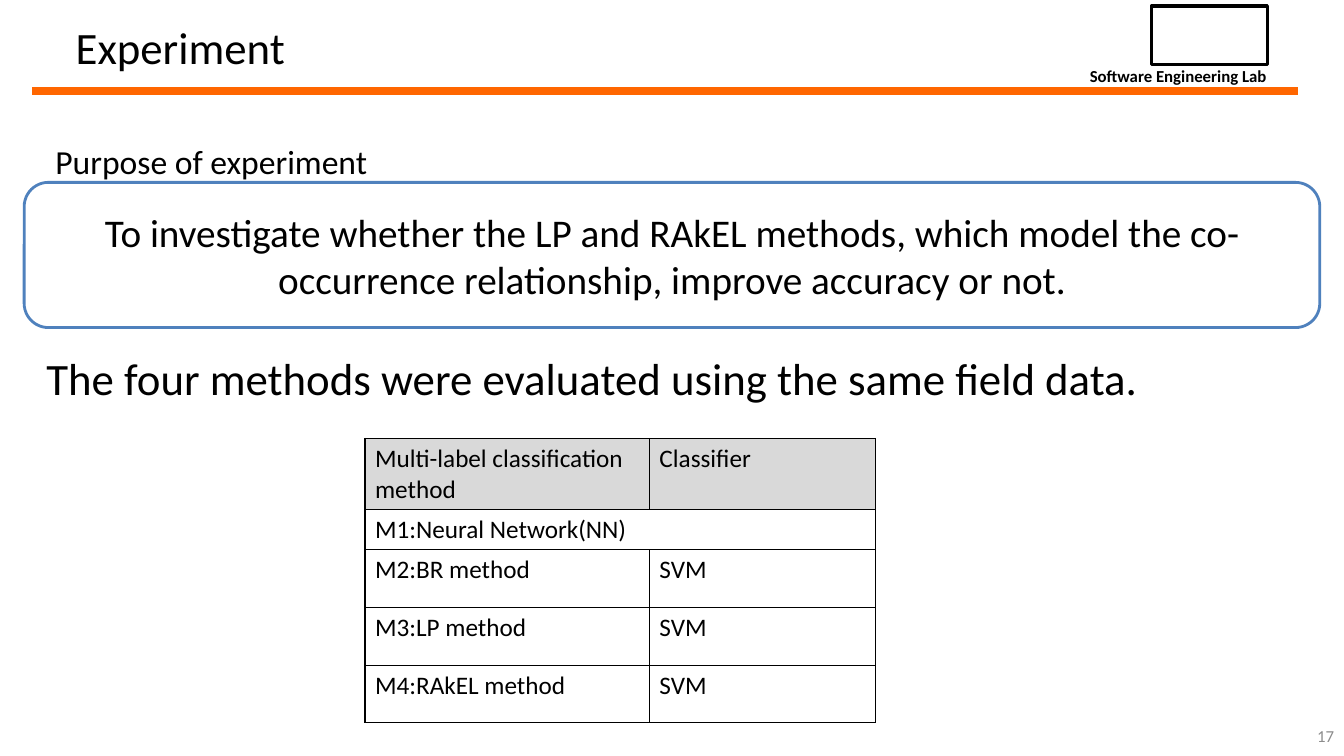
"""Build the experiment slide: purpose, statement and table of compared methods."""
from dataclasses import dataclass

from lxml.etree import SubElement
from pptx import Presentation
from pptx.dml.color import RGBColor
from pptx.enum.shapes import MSO_CONNECTOR as Connector, MSO_SHAPE as Preset
from pptx.enum.text import MSO_ANCHOR as Anchor, MSO_AUTO_SIZE as AutoSize, PP_ALIGN as Align
from pptx.oxml.ns import qn
from pptx.util import Inches, Pt

TITLE = "Experiment"
LAB_NAME = "Software Engineering Lab"
HEADING = "Purpose of experiment"
PURPOSE = ("To investigate whether the LP and RAkEL methods, which model the "
           "co-occurrence relationship, improve accuracy or not.")
STATEMENT = "The four methods were evaluated using the same field data."
PAGE_NUMBER = "17"
METHODS = [
    ("Multi-label classification method", "Classifier"),
    ("M1:Neural Network(NN)", None),
    ("M2:BR method", "SVM"),
    ("M3:LP method", "SVM"),
    ("M4:RAkEL method", "SVM"),
]

PLACES = {
    "title": (4.88, 0.4, 75.47, 11.47),
    "statement": (2.7, 45.73, 84.25, 10),
    "page": (76.67, 94.67, 23.33, 5.33),
    "purpose": (1.8, 24.13, 96.4, 19.2),
    "heading": (3.38, 18, 34.96, 6.67),
    "lab_name": (80.35, 8, 14.85, 4),
    "lab_block": (85.67, 0.8, 8.63, 7.73),
    "table": (27.16, 58, 37.96, 37.64),
}
RULE = (2.4, 96.55, 12)
COLUMN_SHARES = (21.16, 16.8)
HEADER_ROW, SPAN_ROW, METHOD_ROW = 9.38, 5.36, 7.63


@dataclass(frozen=True)
class Theme:
    font: str = "Calibri"
    ink: str = "000000"
    paper: str = "FFFFFF"
    rule: str = "FF6600"
    frame: str = "4F81BD"
    header: str = "D9D9D9"
    muted: str = "8C8C8C"
    large: int = 32
    purpose: int = 28
    heading: int = 24
    table: int = 18
    small: int = 12


THEME = Theme()
WIDTH, HEIGHT = Inches(13.33), Inches(7.5)


def across(share):
    return round(WIDTH * share / 100)


def down(share):
    return round(HEIGHT * share / 100)


def place(name):
    left, top, width, height = PLACES[name]
    return across(left), down(top), across(width), down(height)


def write(frame, text, size, color=THEME.ink, bold=False, align=Align.LEFT,
          anchor=Anchor.TOP, wrap=True):
    frame.word_wrap = wrap
    frame.vertical_anchor = anchor
    paragraph = frame.paragraphs[0]
    paragraph.alignment = align
    run = paragraph.add_run()
    run.text = text
    run.font.name = THEME.font
    run.font.size = Pt(size)
    run.font.bold = bold
    run.font.color.rgb = RGBColor.from_string(color)
    return paragraph


def fill_placeholder(shape, name, text, **style):
    shape.left, shape.top, shape.width, shape.height = place(name)
    shape.text_frame.auto_size = AutoSize.NONE
    return write(shape.text_frame, text, THEME.large, **style)


def add_text(slide, name, text, size, **style):
    write(slide.shapes.add_textbox(*place(name)).text_frame, text, size, **style)


def add_box(slide, preset, name, line, weight):
    shape = slide.shapes.add_shape(preset, *place(name))
    shape.shadow.inherit = False
    shape.fill.solid()
    shape.fill.fore_color.rgb = RGBColor.from_string(THEME.paper)
    shape.line.color.rgb = RGBColor.from_string(line)
    shape.line.width = Pt(weight)
    return shape


def add_rule(slide):
    left, right, top = RULE
    rule = slide.shapes.add_connector(Connector.STRAIGHT, across(left), down(top),
                                      across(right), down(top))
    rule.line.color.rgb = RGBColor.from_string(THEME.rule)
    rule.line.width = Pt(6)
    SubElement(rule._element.spPr, qn("a:effectLst"))


def format_cell(cell, header):
    properties = cell._tc.get_or_add_tcPr()
    for side in ("lnL", "lnR", "lnT", "lnB"):
        border = SubElement(properties, qn(f"a:{side}"), w=str(Pt(1)))
        solid = SubElement(border, qn("a:solidFill"))
        SubElement(solid, qn("a:srgbClr"), val=THEME.ink)
    if header:
        cell.fill.solid()
        cell.fill.fore_color.rgb = RGBColor.from_string(THEME.header)
    else:
        cell.fill.background()


def add_methods(slide):
    table = slide.shapes.add_table(len(METHODS), len(COLUMN_SHARES), *place("table")).table
    table.horz_banding = False
    for column, share in zip(table.columns, COLUMN_SHARES):
        column.width = across(share)
    for index, texts in enumerate(METHODS):
        spans = None in texts
        share = HEADER_ROW if index == 0 else SPAN_ROW if spans else METHOD_ROW
        table.rows[index].height = down(share)
        for position, text in enumerate(texts):
            cell = table.cell(index, position)
            format_cell(cell, header=index == 0)
            if text:
                write(cell.text_frame, text, THEME.table)
        if spans:
            table.cell(index, 0).merge(table.cell(index, 1))


def main():
    presentation = Presentation()
    presentation.slide_width, presentation.slide_height = WIDTH, HEIGHT
    slide = presentation.slides.add_slide(presentation.slide_layouts[1])
    add_rule(slide)
    add_text(slide, "lab_name", LAB_NAME, THEME.small, bold=True, wrap=False)
    add_box(slide, Preset.RECTANGLE, "lab_block", THEME.ink, 2.25)
    fill_placeholder(slide.shapes.title, "title", TITLE, anchor=Anchor.MIDDLE)
    statement = fill_placeholder(slide.placeholders[1], "statement", STATEMENT)
    properties = statement._p.get_or_add_pPr()
    properties.set("marL", "0")
    properties.set("indent", "0")
    SubElement(properties, qn("a:buNone"))
    add_text(slide, "page", PAGE_NUMBER, THEME.small, color=THEME.muted,
             align=Align.RIGHT, anchor=Anchor.MIDDLE)
    purpose = add_box(slide, Preset.ROUNDED_RECTANGLE, "purpose", THEME.frame, 2)
    write(purpose.text_frame, PURPOSE, THEME.purpose, align=Align.CENTER,
          anchor=Anchor.MIDDLE)
    add_text(slide, "heading", HEADING, THEME.heading)
    add_methods(slide)
    presentation.save("out.pptx")


if __name__ == "__main__":
    main()
